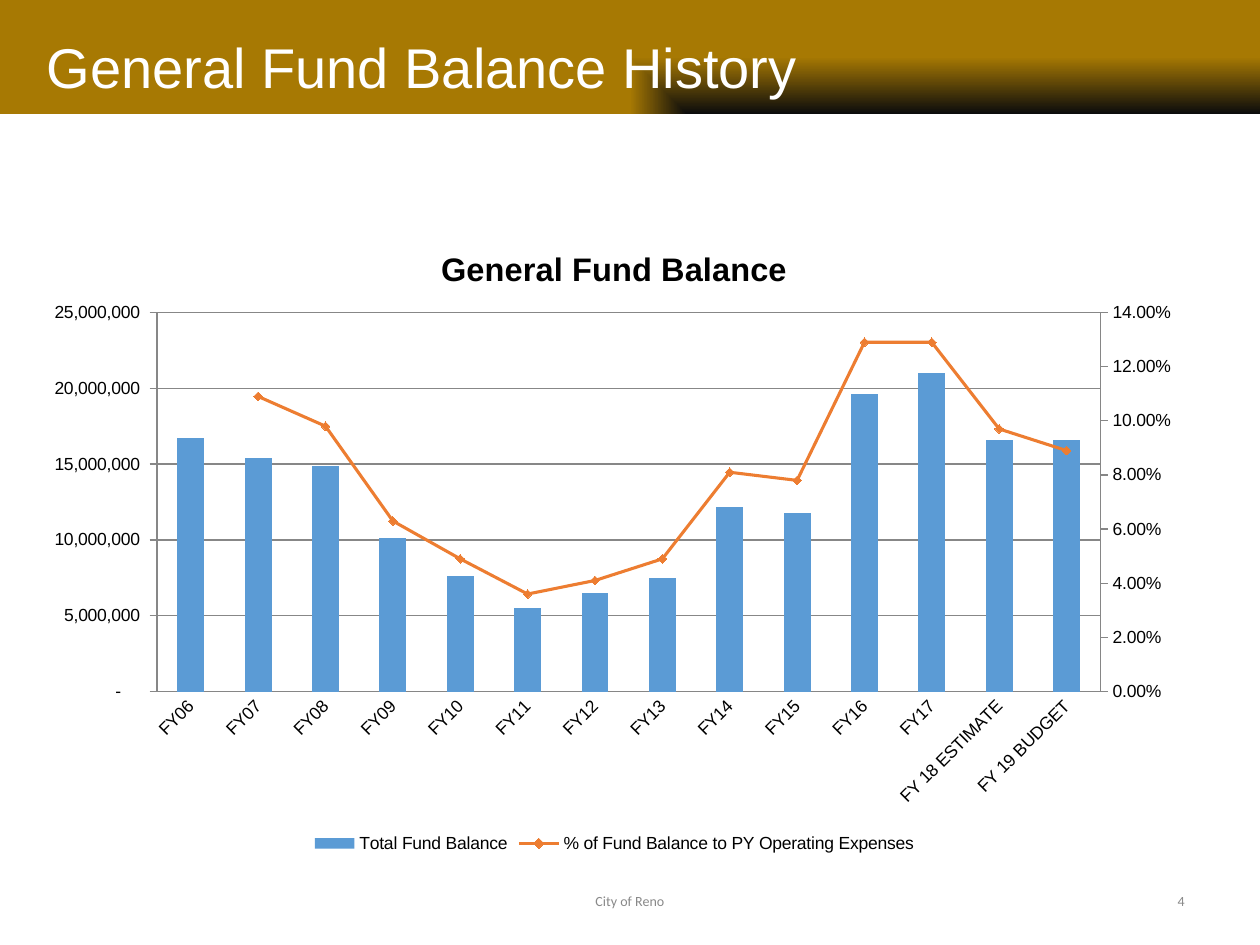
"""Build the General Fund Balance History slide with a column and line chart."""
from lxml.etree import SubElement
from pptx import Presentation
from pptx.chart.axis import ValueAxis
from pptx.chart.data import CategoryChartData
from pptx.dml.color import RGBColor
from pptx.enum.chart import XL_CHART_TYPE, XL_LEGEND_POSITION, XL_MARKER_STYLE, XL_TICK_MARK
from pptx.enum.shapes import MSO_SHAPE
from pptx.enum.text import MSO_ANCHOR, PP_ALIGN
from pptx.oxml import parse_xml
from pptx.oxml.ns import nsdecls, qn
from pptx.util import Pt


def rgb(value):
    return RGBColor.from_string(value)


def style(font, size, color, name="Arial", bold=False):
    font.size, font.name, font.bold = Pt(size), name, bold
    font.color.rgb = rgb(color)


prs = Presentation()
prs.slide_width, prs.slide_height = Pt(720), Pt(540)
s = prs.slides.add_slide(prs.slide_layouts[5])

banner = s.shapes.add_shape(MSO_SHAPE.RECTANGLE, 0, 0, Pt(720), Pt(65))
banner.shadow.inherit = False
banner.line.fill.background()
banner.fill.gradient()
for stop, color in zip(banner.fill.gradient_stops, ("0C0C0C", "A77903")):
    stop.color.rgb = rgb(color)
grad = banner._element.spPr.find(qn("a:gradFill"))
grad.replace(grad.find(qn("a:lin")), parse_xml(
    f'<a:path {nsdecls("a")} path="rect"><a:fillToRect l="100000" t="100000"/></a:path>'))
s.shapes._spTree.insert(2, banner._element)

title = s.shapes.title
title.left, title.top, title.width, title.height = Pt(19.5), Pt(9.5), Pt(562), Pt(56)
tf = title.text_frame
tf.text = "General Fund Balance History"
tf.vertical_anchor = MSO_ANCHOR.MIDDLE
p = tf.paragraphs[0]
p.alignment = PP_ALIGN.LEFT
pPr = p._p.get_or_add_pPr()
pPr.set("marL", str(Pt(36)))
pPr.set("indent", str(Pt(-36)))
style(p.font, 32, "FFFFFF")

cd = CategoryChartData()
cd.categories = [f"FY{year:02}" for year in range(6, 18)] + ["FY 18 ESTIMATE", "FY 19 BUDGET"]
millions = (16.7, 15.4, 14.9, 10.1, 7.6, 5.5, 6.5, 7.5, 12.2, 11.8, 19.6, 21, 16.6, 16.6)
money = '_(* #,##0_);_(* \\(#,##0\\);_(* "-"??_);_(@_)'
cd.add_series("Total Fund Balance", [round(m * 1000000) for m in millions], money)
cd.add_series("% of Fund Balance to PY Operating Expenses",
              (None, 0.109, 0.098, 0.063, 0.049, 0.036, 0.041, 0.049,
               0.081, 0.078, 0.129, 0.129, 0.097, 0.089), "0.00%")
chart = s.shapes.add_chart(XL_CHART_TYPE.COLUMN_CLUSTERED, Pt(19.5), Pt(127),
                           Pt(663), Pt(363.5), cd).chart
style(chart.font, 10, "000000")
chart.has_title = True
chart.chart_title.text_frame.text = "General Fund Balance"
style(chart.chart_title.text_frame.paragraphs[0].font, 18.6, "000000", bold=True)
chart.has_legend = True
chart.legend.position = XL_LEGEND_POSITION.BOTTOM
chart.legend.include_in_layout = False

area = chart._chartSpace.chart.plotArea
bars = area.find(qn("c:barChart"))
line = parse_xml(
    f'<c:lineChart {nsdecls("c")}><c:grouping val="standard"/><c:varyColors val="0"/>'
    '<c:marker val="1"/><c:axId val="50"/><c:axId val="60"/></c:lineChart>')
ser = bars.findall(qn("c:ser"))[1]
for invert in ser.findall(qn("c:invertIfNegative")):
    ser.remove(invert)
line.insert(2, ser)
bars.addnext(line)
right = parse_xml(
    f'<c:valAx {nsdecls("c")}><c:axId val="60"/><c:scaling/><c:delete val="0"/>'
    '<c:axPos val="r"/><c:crossAx val="50"/><c:crosses val="max"/></c:valAx>')
hidden = parse_xml(
    f'<c:catAx {nsdecls("c")}><c:axId val="50"/><c:scaling/><c:delete val="1"/>'
    '<c:axPos val="b"/><c:crossAx val="60"/><c:crosses val="autoZero"/></c:catAx>')
area.find(qn("c:valAx")).addnext(right)
right.addnext(hidden)

layout = area.find(qn("c:layout"))
if layout is None:
    layout = parse_xml(f'<c:layout {nsdecls("c")}/>')
    area.insert(0, layout)
manual = SubElement(layout, qn("c:manualLayout"))
for tag, value in (("layoutTarget", "inner"), ("xMode", "edge"), ("yMode", "edge"),
                   ("x", "0.106"), ("y", "0.142"), ("w", "0.813"), ("h", "0.596")):
    SubElement(manual, qn(f"c:{tag}")).set("val", value)

cat_axis, val_axis, pct_axis = chart.category_axis, chart.value_axis, ValueAxis(right)
for axis, tick in ((cat_axis, XL_TICK_MARK.NONE), (val_axis, XL_TICK_MARK.NONE),
                   (pct_axis, XL_TICK_MARK.OUTSIDE)):
    axis.major_tick_mark, axis.minor_tick_mark = tick, XL_TICK_MARK.NONE
    axis.format.line.color.rgb = rgb("868686")
    axis.format.line.width = Pt(0.75)
    style(axis.tick_labels.font, 10, "000000")
cat_axis._element.find(qn("c:txPr")).find(qn("a:bodyPr")).set("rot", "-2700000")
for axis, top, step, fmt in ((val_axis, 25000000, 5000000, money),
                             (pct_axis, 0.14, 0.02, "0.00%")):
    axis.minimum_scale, axis.maximum_scale, axis.major_unit = 0, top, step
    axis.tick_labels.number_format = fmt
    axis.tick_labels.number_format_is_linked = False
val_axis.has_major_gridlines = True
val_axis.major_gridlines.format.line.color.rgb = rgb("868686")
val_axis.major_gridlines.format.line.width = Pt(0.75)

columns, trend = chart.plots
columns.gap_width, columns.vary_by_categories = 150, False
columns.series[0].format.fill.solid()
columns.series[0].format.fill.fore_color.rgb = rgb("5B9BD5")
pct = trend.series[0]
pct.smooth = False
pct.format.line.color.rgb = rgb("ED7D31")
pct.format.line.width = Pt(1.75)
pct.marker.style, pct.marker.size = XL_MARKER_STYLE.DIAMOND, 5
pct.marker.format.fill.solid()
pct.marker.format.fill.fore_color.rgb = rgb("ED7D31")
pct.marker.format.line.color.rgb = rgb("ED7D31")

for text, left, width, align in (("City of Reno", 246, 228, PP_ALIGN.CENTER),
                                 ("4", 516, 168, PP_ALIGN.RIGHT)):
    tf = s.shapes.add_textbox(Pt(left), Pt(500.5), Pt(width), Pt(28.75)).text_frame
    tf.word_wrap = True
    tf.vertical_anchor = MSO_ANCHOR.MIDDLE
    p = tf.paragraphs[0]
    p.text, p.alignment = text, align
    style(p.font, 8, "898989", "Calibri")

prs.save("out.pptx")
